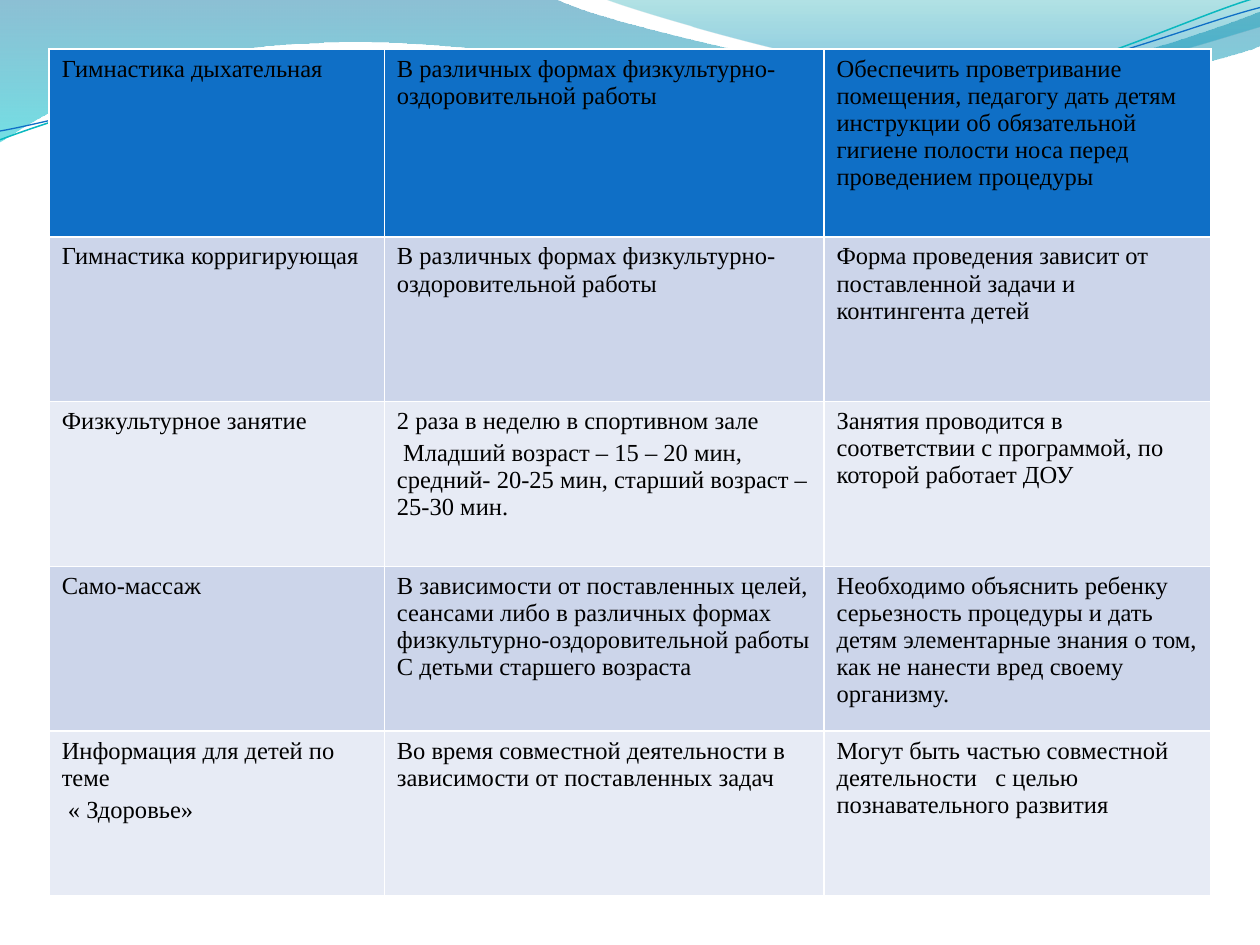
from lxml.etree import SubElement
from pptx import Presentation
from pptx.dml.color import RGBColor
from pptx.oxml.ns import qn
from pptx.util import Inches, Pt

BLACK = RGBColor(0x00, 0x00, 0x00)
BLUE = RGBColor(0x0F, 0x6F, 0xC6)
TEAL = RGBColor(0x0A, 0xB8, 0xBF)
BAND_DARK = RGBColor(0xCC, 0xD5, 0xEA)
BAND_LIGHT = RGBColor(0xE7, 0xEB, 0xF5)
DEEP_BLUE = RGBColor(0x00, 0x74, 0xA1)
CYAN = RGBColor(0x00, 0xC6, 0xCF)
SEA_GREEN = RGBColor(0x00, 0xA1, 0xA9)
SKY_BLUE = RGBColor(0x00, 0x8B, 0xBF)

FONT = "Times New Roman"
WIDTH, HEIGHT = 10, 7.5
MARGIN = 0.39
UNITS = 1000
COLUMN_WIDTHS = [2.66, 3.49, 3.07]
TABLE_HEIGHT, HEADER_HEIGHT = 6.72, 1.49

ACTIVITIES = [
    (["Гимнастика дыхательная"],
     ["В различных формах физкультурно-оздоровительной работы"],
     ["Обеспечить проветривание помещения, педагогу дать детям инструкции об "
      "обязательной гигиене полости носа перед проведением процедуры"]),
    (["Гимнастика корригирующая"],
     ["В различных формах физкультурно-оздоровительной работы"],
     ["Форма проведения зависит от поставленной задачи и контингента детей"]),
    (["Физкультурное занятие"],
     ["2 раза в неделю в спортивном зале",
      " Младший возраст – 15 – 20 мин, средний- 20-25 мин, старший возраст – 25-30 мин."],
     ["Занятия проводится в соответствии с программой, по которой работает ДОУ"]),
    (["Само-массаж"],
     ["В зависимости от поставленных целей, сеансами либо в различных формах "
      "физкультурно-оздоровительной работы С детьми старшего возраста"],
     ["Необходимо объяснить ребенку серьезность процедуры и дать детям "
      "элементарные знания о том, как не нанести вред своему организму."]),
    (["Информация для детей по теме", " « Здоровье»"],
     ["Во время совместной деятельности в зависимости от поставленных задач"],
     ["Могут быть частью совместной деятельности   с целью познавательного развития"]),
]

WAVES = [
    ([(-0.01, 0), (4.4, -0.01),
      (4.76, 0.17, 6.64, 0.63, 7.58, 0.63), (8.53, 0.63, 9.58, 0.26, 10, 0.09),
      (10.01, 0.36), (9.83, 0.44, 8.7, 0.76, 7.46, 0.75),
      (6.22, 0.75, 3.82, 0.28, 2.57, 0.34), (1.29, 0.36, 0.46, 0.83, -0.01, 1.13)],
     [(0, DEEP_BLUE, 45), (100, CYAN, 55)]),
    ([(4.79, -0.01), (5.09, 0.11, 6.82, 0.62, 7.69, 0.65),
      (8.56, 0.69, 9.61, 0.32, 10, 0.21), (10, 0)],
     [(0, SEA_GREEN, 30), (80, SKY_BLUE, 45)]),
]

STRANDS = [
    ([(0, 1.11), (0.48, 0.93, 1.58, 0.57, 2.77, 0.52),
      (3.95, 0.47, 5.93, 0.89, 7.13, 0.8), (8.33, 0.71, 9.38, 0.15, 9.98, -0.02)],
     TEAL, 0.85),
    ([(0, 1.04), (0.47, 0.96, 1.64, 0.61, 2.83, 0.56),
      (4.03, 0.51, 5.97, 0.84, 7.17, 0.75), (8.36, 0.67, 9.41, 0.21, 10, 0.06)],
     BLUE, 0.75),
]


def add_curve(slide, segments, close):
    anchors = [tuple(round(v * UNITS) for v in segment[-2:]) for segment in segments]
    builder = slide.shapes.build_freeform(*anchors[0], scale=Inches(1) / UNITS)
    builder.add_line_segments(anchors[1:], close=close)
    curve = builder.convert_to_shape()
    curve.shadow.inherit = False
    left, top = (min(values) for values in zip(*anchors))
    edges = list(curve._element.iter(qn("a:lnTo")))
    for edge, segment in zip(edges, segments[1:]):
        if len(segment) == 6:
            edge.addprevious(bezier := edge.makeelement(qn("a:cubicBezTo")))
            for x, y in zip(segment[::2], segment[1::2]):
                SubElement(bezier, qn("a:pt"), x=str(round(x * UNITS) - left),
                           y=str(round(y * UNITS) - top))
            edge.getparent().remove(edge)
    return curve


def fill_gradient(shape, stops):
    shape.fill.gradient()
    gradient = shape._element.spPr.find(qn("a:gradFill"))
    for child in list(gradient):
        gradient.remove(child)
    stop_list = SubElement(gradient, qn("a:gsLst"))
    for position, color, opacity in stops:
        stop = SubElement(stop_list, qn("a:gs"), pos=str(position * 1000))
        tint = SubElement(stop, qn("a:srgbClr"), val=str(color))
        SubElement(tint, qn("a:alpha"), val=str(opacity * 1000))
    SubElement(gradient, qn("a:lin"), ang="5400000", scaled="0")


def fill_cell(cell, paragraphs, color):
    cell.fill.solid()
    cell.fill.fore_color.rgb = color
    frame = cell.text_frame
    for index, text in enumerate(paragraphs):
        paragraph = frame.add_paragraph() if index else frame.paragraphs[0]
        if index:
            paragraph.space_before = Pt(2.8)
        run = paragraph.add_run()
        run.text = text
        run.font.name = FONT
        run.font.size = Pt(14)
        run.font.bold = False
        run.font.color.rgb = BLACK


def add_activities(slide):
    table = slide.shapes.add_table(
        len(ACTIVITIES), len(COLUMN_WIDTHS), Inches(MARGIN), Inches(MARGIN),
        Inches(sum(COLUMN_WIDTHS)), Inches(TABLE_HEIGHT)).table
    for column, width in zip(table.columns, COLUMN_WIDTHS):
        column.width = Inches(width)
    body_height = (TABLE_HEIGHT - HEADER_HEIGHT) / (len(ACTIVITIES) - 1)
    for index, (row, activity) in enumerate(zip(table.rows, ACTIVITIES)):
        row.height = Inches(body_height if index else HEADER_HEIGHT)
        band = BAND_DARK if index % 2 else BAND_LIGHT
        for cell, paragraphs in zip(row.cells, activity):
            fill_cell(cell, paragraphs, band if index else BLUE)


def main():
    deck = Presentation()
    deck.slide_width, deck.slide_height = Inches(WIDTH), Inches(HEIGHT)
    slide = deck.slides.add_slide(deck.slide_layouts[6])
    for segments, stops in WAVES:
        wave = add_curve(slide, segments, close=True)
        fill_gradient(wave, stops)
        wave.line.fill.background()
    for segments, color, weight in STRANDS:
        strand = add_curve(slide, segments, close=False)
        strand.fill.background()
        strand.line.color.rgb = color
        strand.line.width = Pt(weight)
    add_activities(slide)
    deck.save("out.pptx")


if __name__ == "__main__":
    main()
